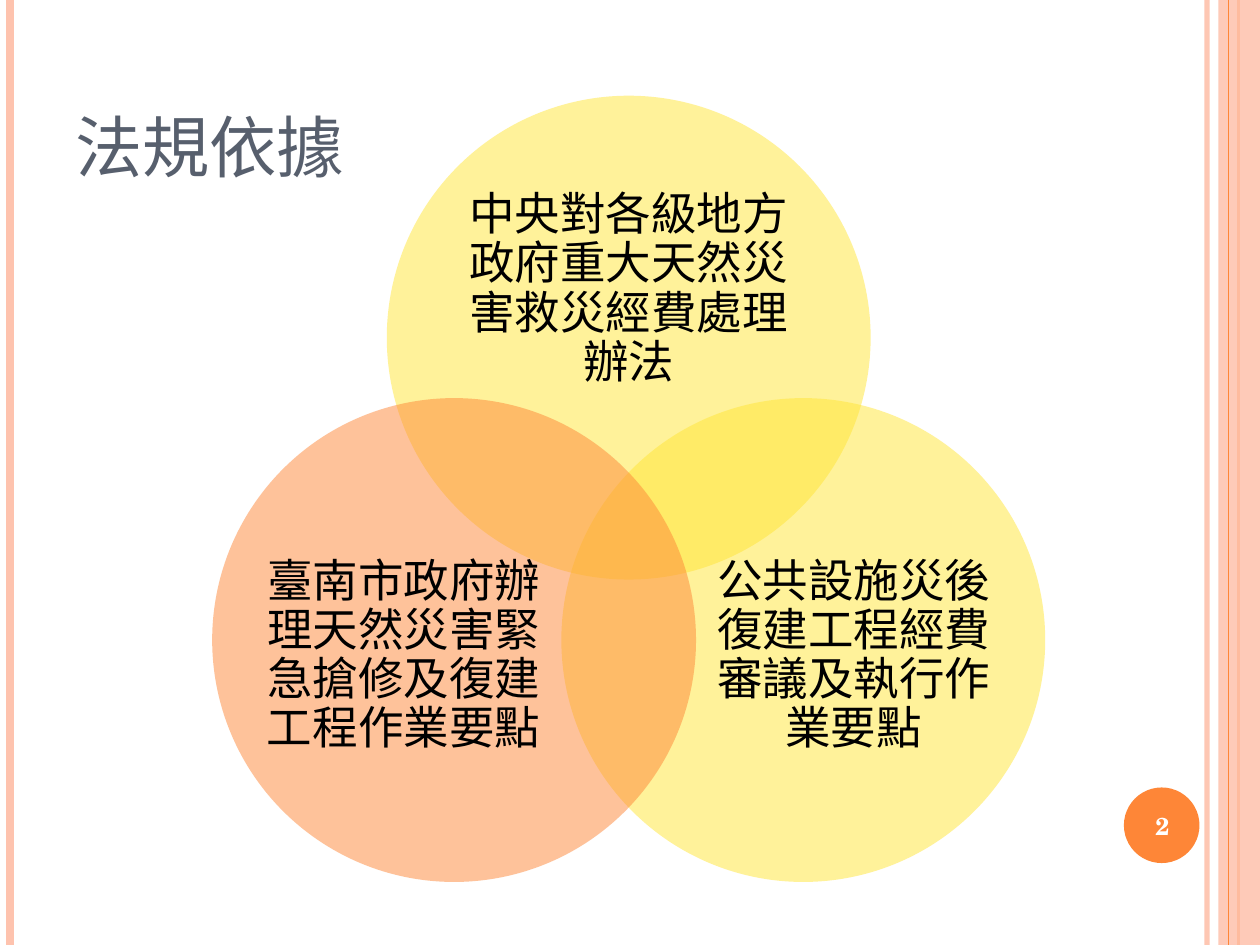
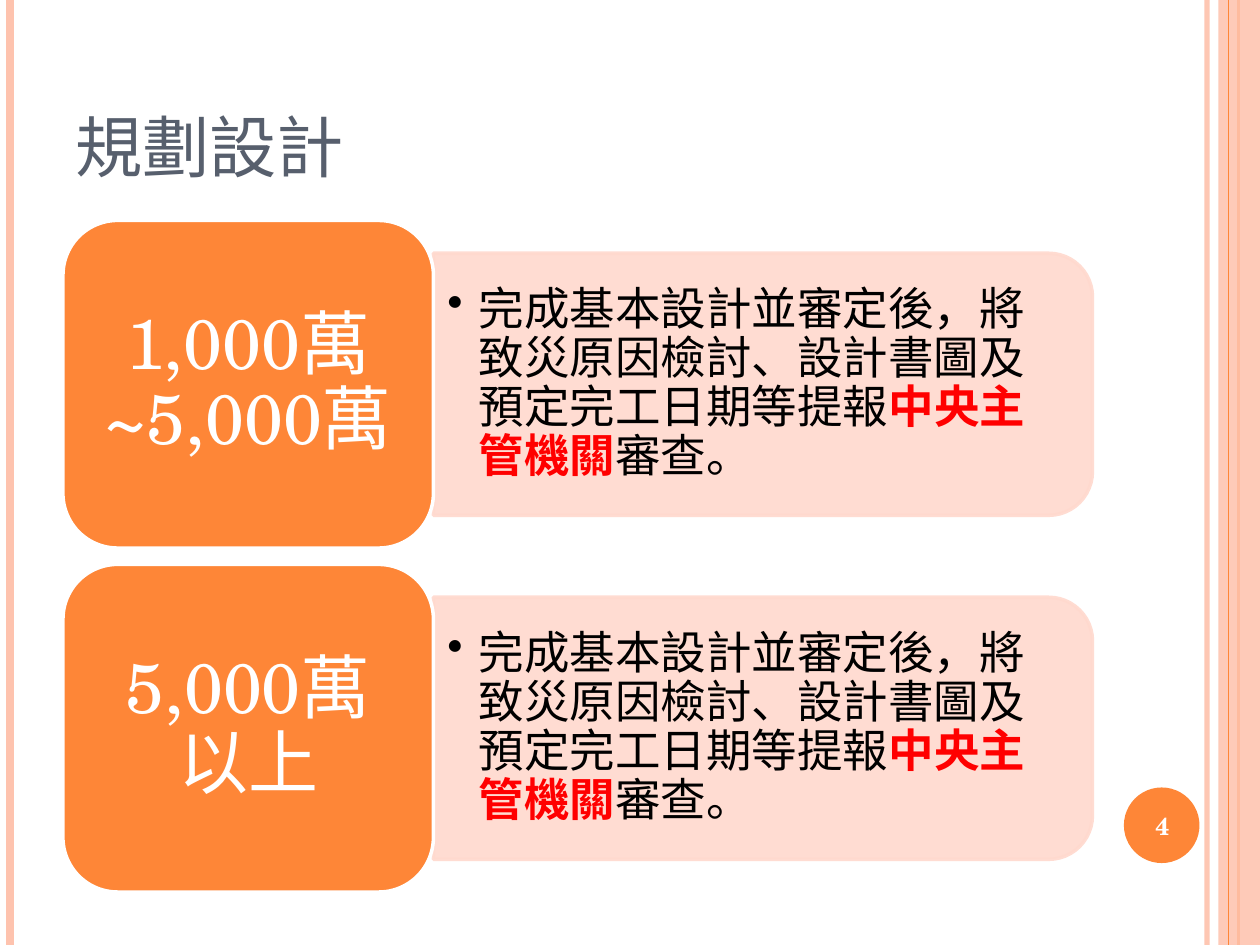
from math import cos, radians, sin

from lxml import etree
from pptx import Presentation, util as u
from pptx.dml.color import RGBColor
from pptx.enum import shapes, text
from pptx.oxml.ns import qn

W, H = 10, 7.5
FONT = "TeX Gyre Schola"
ORANGE, PEACH, PALE, YELLOW = "FE8637", "FEC3AE", "FFD9CE", "FFE636"
SLATE, BLACK, WHITE, RED = "575F6D", "000000", "FFFFFF", "FF0000"
SHAPE = shapes.MSO_SHAPE
MIDDLE, BOTTOM = text.MSO_ANCHOR.MIDDLE, text.MSO_ANCHOR.BOTTOM
LEFT, CENTER = text.PP_ALIGN.LEFT, text.PP_ALIGN.CENTER


def paint(fill, color, opacity=100):
    """Make the fill of a shape, line or font solid; opacity is in percent."""
    fill.solid()
    fill.fore_color.rgb = RGBColor.from_string(color)
    if opacity < 100:
        clr = fill._xPr.find(qn("a:solidFill"))[0]
        etree.SubElement(clr, qn("a:alpha"), val=str(opacity * 1000))


def write(s, runs, box, size, color=BLACK, bold=False, align=CENTER, anchor=MIDDLE,
          inset=(0, 0), spacing=0.9, bullet=None, caps=None):
    """Add a text box; runs is a string or a list of (string, colour, bold)."""
    tf = s.shapes.add_textbox(*map(u.Inches, box)).text_frame
    tf.word_wrap, tf.vertical_anchor = True, anchor
    tf.margin_left = tf.margin_right = u.Inches(inset[0])
    tf.margin_top = tf.margin_bottom = u.Inches(inset[1])
    p = tf.paragraphs[0]
    p.alignment, p.line_spacing = align, spacing
    if bullet:
        pPr = p._p.get_or_add_pPr()
        pPr.set("marL", str(u.Inches(0.25)))
        pPr.set("indent", str(u.Inches(-0.25)))
        etree.SubElement(pPr, qn("a:buChar"), char=bullet)
    for words, hue, heavy in [(runs, color, bold)] if isinstance(runs, str) else runs:
        r = p.add_run()
        r.text = words
        r.font.name, r.font.size, r.font.bold = FONT, u.Pt(size), heavy
        paint(r.font.fill, hue)
        if caps:
            r.font._element.set("cap", caps)


prs = Presentation()
prs.slide_width, prs.slide_height = u.Inches(W), u.Inches(H)

# Shared frame: edge lines, right band, title and number badge
slides = []
for title in ("法規依據", "規劃設計"):
    s = prs.slides.add_slide(prs.slide_layouts[6])
    slides.append(s)
    for x, color, width, opacity in ((9.58, PEACH, 3, 93), (0.08, PEACH, 4.5, 100),
                                     (9.83, ORANGE, 1.5, 100), (9.75, ORANGE, 0.75, 100)):
        if x == 9.75:
            band = s.shapes.add_shape(SHAPE.RECTANGLE, u.Inches(9.67), 0, u.Inches(0.33), u.Inches(H))
            paint(band.fill, PEACH, 87)
            band.line.fill.background()
        edge = s.shapes.add_connector(shapes.MSO_CONNECTOR.STRAIGHT,
                                      u.Inches(x), 0, u.Inches(x), u.Inches(H))
        edge.line.width = u.Pt(width)
        paint(edge.line.fill, color, opacity)
    badge = s.shapes.add_shape(SHAPE.OVAL, *map(u.Inches, (8.92, 6.25, 0.6, 0.6)))
    paint(badge.fill, ORANGE)
    badge.line.fill.background()
    write(s, title, (0.5, 0.3, 8.17, 1.25), 48, SLATE, align=LEFT, anchor=BOTTOM,
          inset=(0.1, 0.05), spacing=1, caps="small")

# Legal basis: three circles placed evenly around one centre
s = slides[0]
radius, orbit, cx, cy = 1.92, 1.6, W / 2 - 0.01, 4.28
for angle, color, dx, dy, tw, th, words in (
        (-90, YELLOW, 0, -0.38, 2.82, 1.73, "中央對各級地方政府重大天然災害救災經費處理辦法"),
        (30, YELLOW, 0.4, 0.13, 2.3, 2.11, "公共設施災後復建工程經費審議及執行作業要點"),
        (150, ORANGE, -0.4, 0.13, 2.3, 2.11, "臺南市政府辦理天然災害緊急搶修及復建工程作業要點")):
    x, y = cx + orbit * cos(radians(angle)), cy + orbit * sin(radians(angle))
    circle = s.shapes.add_shape(SHAPE.OVAL, *map(u.Inches, (x - radius, y - radius, 2 * radius, 2 * radius)))
    paint(circle.fill, color, 50)
    circle.line.fill.background()
    write(s, words, (x + dx - tw / 2, y + dy - th / 2, tw, th), 26)

# Planning and design: one row per budget range
s = slides[1]
rule = [("完成基本設計並審定後，將致災原因檢討、設計書圖及預定完工日期等提報", BLACK, False),
        ("中央主管機關", RED, True), ("審查。", BLACK, False)]
left, label_w, label_h, panel_w, panel_h, pad = 0.5, 2.94, 2.6, 5.23, 2.08, 0.13
panel_x = left + label_w
for row, budget in enumerate(("1,000萬~5,000萬", "5,000萬以上")):
    top = 1.75 + row * 2.73
    mid = top + label_h / 2
    # The panel is turned a quarter, so its width and height swap
    panel = s.shapes.add_shape(SHAPE.ROUND_2_SAME_RECTANGLE, *map(u.Inches, (
        panel_x + (panel_w - panel_h) / 2, mid - panel_w / 2, panel_h, panel_w)))
    panel.rotation = 90
    paint(panel.fill, PALE, 90)
    paint(panel.line.fill, PALE, 90)
    write(s, rule, (panel_x, mid - 0.94, 5.13, 1.88), 26, align=LEFT,
          inset=(0.11, 0.05), bullet="•")
    label = s.shapes.add_shape(SHAPE.ROUNDED_RECTANGLE, *map(u.Inches, (left, top, label_w, label_h)))
    paint(label.fill, ORANGE)
    paint(label.line.fill, WHITE)
    panel.line.width = label.line.width = u.Pt(2)
    write(s, budget, (left + pad, top + pad, label_w - 2 * pad, label_h - 2 * pad), 40, WHITE,
          inset=(0.17, 0.08))

# Slide numbers lie on top; nothing casts a shadow
for s, number in zip(slides, ("2", "4")):
    write(s, number, (8.89, 6.27, 0.67, 0.57), 14, WHITE, bold=True, inset=(0.1, 0.05), spacing=1)
    for sp in s.shapes:
        etree.SubElement(sp._element.spPr, qn("a:effectLst"))

prs.save("out.pptx")
